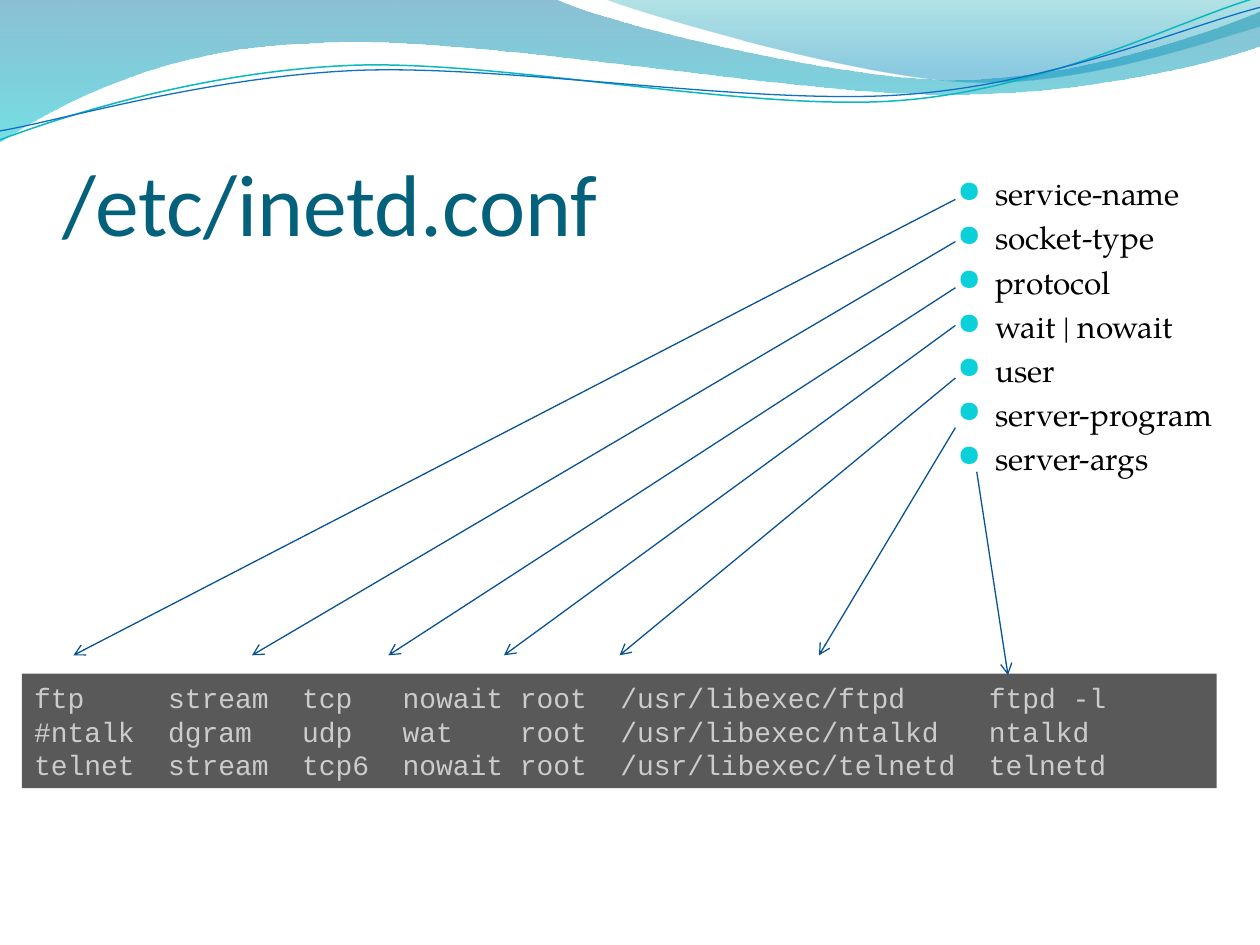
"""Build a slide that explains the fields of /etc/inetd.conf."""
from lxml.etree import SubElement
from pptx import Presentation
from pptx.dml.color import RGBColor
from pptx.enum.shapes import MSO_CONNECTOR, MSO_SHAPE
from pptx.enum.text import MSO_ANCHOR, PP_ALIGN
from pptx.oxml.ns import qn
from pptx.util import Cm, Pt

COLORS = {
    "title": "04617B", "text": "000000", "bullet": "0BD0D9", "arrow": "095295",
    "panel": "000000", "code": "CCCCCC", "teal line": "0AB8BF", "blue line": "0F6FC6",
    "band top": "0074A1", "band bottom": "00C6CF",
    "crest top": "00A1A9", "crest bottom": "008BBF",
}
TITLE = "/etc/inetd.conf"
FIELDS = [
    ("service-name", (19.26, 4.02), (1.48, 13.21)),
    ("socket-type", (19.26, 4.87), (5.08, 13.21)),
    ("protocol", (19.26, 5.8), (7.83, 13.21)),
    ("wait | nowait", (19.26, 6.56), (10.16, 13.21)),
    ("user", (19.26, 7.62), (12.49, 13.21)),
    ("server-program", (19.26, 8.62), (16.51, 13.21)),
    ("server-args", (19.69, 9.51), (20.32, 13.61)),
]
ENTRIES = [
    ("ftp", "stream", "tcp", "nowait", "root", "/usr/libexec/ftpd", "ftpd -l"),
    ("#ntalk", "dgram", "udp", "wat", "root", "/usr/libexec/ntalkd", "ntalkd"),
    ("telnet", "stream", "tcp6", "nowait", "root", "/usr/libexec/telnetd", "telnetd"),
]
COLUMN_STARTS = (8, 16, 22, 29, 35, 57)
CHARACTER_WIDTH = Pt(9.57)
BANDS = [
    ([(0, 0), (11.18, -0.03), (12.09, 0.43, 16.87, 1.6, 19.25, 1.6),
      (21.67, 1.6, 24.33, 0.66, 25.4, 0.23), (25.43, 0.91),
      (24.97, 1.12, 22.1, 1.93, 18.95, 1.9), (15.8, 1.9, 9.7, 0.71, 6.53, 0.86),
      (3.28, 0.91, 1.17, 2.11, -0.03, 2.87)],
     [(0, "band top", 45), (1, "band bottom", 55)]),
    ([(12.17, -0.03), (12.93, 0.28, 17.32, 1.57, 19.53, 1.65),
      (21.74, 1.75, 24.41, 0.81, 25.4, 0.53), (25.4, 0)],
     [(0, "crest top", 30), (0.8, "crest bottom", 45)]),
]
WAVES = [
    ([(0, 2.82), (1.22, 2.36, 4.01, 1.45, 7.04, 1.32),
      (10.03, 1.19, 15.06, 2.26, 18.11, 2.03),
      (21.16, 1.8, 23.83, 0.38, 25.35, -0.05)], "teal line", 0.85),
    ([(0, 2.64), (1.19, 2.44, 4.17, 1.55, 7.19, 1.42),
      (10.24, 1.3, 15.16, 2.13, 18.21, 1.91),
      (21.23, 1.7, 23.9, 0.53, 25.4, 0.15)], "blue line", 0.75),
]


def color(name):
    return RGBColor.from_string(COLORS[name])


def set_alpha(fill_element, percents):
    for element, percent in zip(fill_element.iter(qn("a:srgbClr")), percents):
        SubElement(element, qn("a:alpha"), val=str(percent * 1000))


def bend_curves(shape, segments):
    lines = iter(list(shape._element.iter(qn("a:lnTo"))))
    for segment in segments:
        group = [next(lines) for _ in range(len(segment) // 2)]
        if len(group) == 3:
            curve = group[0].makeelement(qn("a:cubicBezTo"))
            group[0].addprevious(curve)
            for line in group:
                curve.append(line[0])
                line.getparent().remove(line)


def add_outline(slide, segments, close):
    start, *rest = segments
    points = [(Cm(x), Cm(y)) for segment in rest
              for x, y in zip(segment[::2], segment[1::2])]
    builder = slide.shapes.build_freeform(*map(Cm, start))
    builder.add_line_segments(points, close=close)
    shape = builder.convert_to_shape()
    bend_curves(shape, rest)
    shape.shadow.inherit = False
    return shape


def add_band(slide, segments, stops):
    shape = add_outline(slide, segments, True)
    shape.line.fill.background()
    shape.fill.gradient()
    shape.fill.gradient_angle = 270
    for stop, (position, name, _) in zip(shape.fill.gradient_stops, stops):
        stop.position = position
        stop.color.rgb = color(name)
    gradient = shape._element.spPr.find(qn("a:gradFill"))
    set_alpha(gradient, [alpha for _, _, alpha in stops])


def add_wave(slide, segments, name, width):
    shape = add_outline(slide, segments, False)
    shape.fill.background()
    shape.line.color.rgb = color(name)
    shape.line.width = Pt(width)


def add_run(paragraph, text, size, font, name):
    run = paragraph.add_run()
    run.text = text
    run.font.size = Pt(size)
    run.font.name = font
    run.font.color.rgb = color(name)


def next_paragraph(frame, index):
    return frame.add_paragraph() if index else frame.paragraphs[0]


def add_title(slide):
    frame = slide.shapes.add_textbox(Cm(1.27), Cm(1.95), Cm(22.86), Cm(3.17)).text_frame
    frame.word_wrap = True
    frame.vertical_anchor = MSO_ANCHOR.BOTTOM
    frame.margin_left = frame.margin_right = frame.margin_bottom = 0
    add_run(frame.paragraphs[0], TITLE, 50, "Calibri", "title")


def add_field_list(slide):
    frame = slide.shapes.add_textbox(Cm(19.05), Cm(3.39), Cm(5.92), Cm(7.42)).text_frame
    frame.word_wrap = True
    for index, (field, _, _) in enumerate(FIELDS):
        paragraph = next_paragraph(frame, index)
        paragraph.space_before = Pt(3.6)
        properties = paragraph._p.get_or_add_pPr()
        properties.set("marL", str(Cm(0.76)))
        properties.set("indent", str(-Cm(0.76)))
        bullet_color = SubElement(properties, qn("a:buClr"))
        SubElement(bullet_color, qn("a:srgbClr"), val=COLORS["bullet"])
        SubElement(properties, qn("a:buSzPct"), val="95000")
        SubElement(properties, qn("a:buFont"), typeface="OpenSymbol")
        SubElement(properties, qn("a:buChar"), char="●")
        add_run(paragraph, field, 18, "TeX Gyre Pagella", "text")


def add_code_panel(slide):
    panel = slide.shapes.add_shape(MSO_SHAPE.RECTANGLE, Cm(0.44), Cm(13.58), Cm(24.09), Cm(2.31))
    panel.shadow.inherit = False
    panel.line.fill.background()
    panel.fill.solid()
    panel.fill.fore_color.rgb = color("panel")
    set_alpha(panel._element.spPr.find(qn("a:solidFill")), [65])
    frame = panel.text_frame
    frame.word_wrap = True
    frame.vertical_anchor = MSO_ANCHOR.MIDDLE
    for index, entry in enumerate(ENTRIES):
        paragraph = next_paragraph(frame, index)
        paragraph.alignment = PP_ALIGN.LEFT
        tabs = SubElement(paragraph._p.get_or_add_pPr(), qn("a:tabLst"))
        for column in COLUMN_STARTS:
            SubElement(tabs, qn("a:tab"), pos=str(column * CHARACTER_WIDTH), algn="l")
        add_run(paragraph, "\t".join(entry), 16, "Courier New", "code")


def add_arrow(slide, start, end):
    arrow = slide.shapes.add_connector(MSO_CONNECTOR.STRAIGHT, *map(Cm, start + end))
    arrow.line.color.rgb = color("arrow")
    arrow.line.width = Pt(0.75)
    SubElement(arrow.line._get_or_add_ln(), qn("a:tailEnd"), type="arrow")
    SubElement(arrow._element.spPr, qn("a:effectLst"))


def main():
    presentation = Presentation()
    presentation.slide_width, presentation.slide_height = Cm(25.4), Cm(19.05)
    slide = presentation.slides.add_slide(presentation.slide_layouts[6])
    for band in BANDS:
        add_band(slide, *band)
    for wave in WAVES:
        add_wave(slide, *wave)
    add_title(slide)
    add_field_list(slide)
    add_code_panel(slide)
    for _, start, end in FIELDS:
        add_arrow(slide, start, end)
    presentation.save("out.pptx")


if __name__ == "__main__":
    main()
